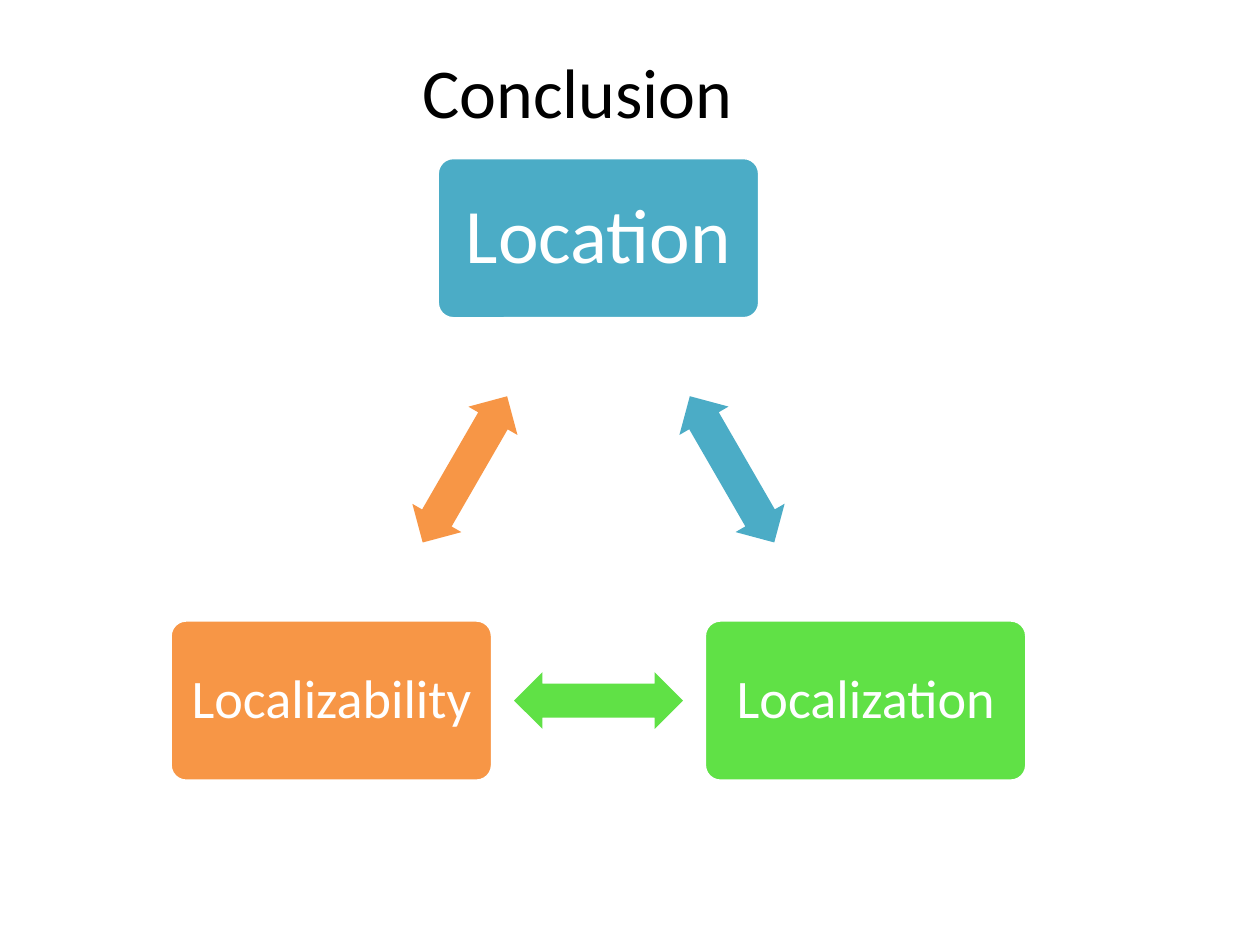
from dataclasses import dataclass

from pptx import Presentation
from pptx.dml.color import RGBColor
from pptx.enum.shapes import MSO_SHAPE as Shape
from pptx.enum.text import MSO_ANCHOR as Anchor, MSO_AUTO_SIZE as Fit, PP_ALIGN as Align
from pptx.util import Inches, Pt

WHITE = RGBColor(0xFF, 0xFF, 0xFF)
BLACK = RGBColor(0, 0, 0)
TEAL = RGBColor(0x4B, 0xAC, 0xC6)
GREEN = RGBColor(0x60, 0xE1, 0x46)
ORANGE = RGBColor(0xF7, 0x96, 0x46)
FONT = "Calibri"
BOX_W, BOX_H = 2.56, 1.28
ARROW_W, ARROW_H = 1.34, 0.45


@dataclass
class Node:
    text: str
    x: float
    y: float
    size: int
    color: RGBColor


NODES = [
    Node("Location", 4.75, 1.89, 44, TEAL),
    Node("Localization", 6.87, 5.56, 31, GREEN),
    Node("Localizability", 2.63, 5.56, 31, ORANGE),
]


def set_text(frame, text: str, size: int, color: RGBColor) -> None:
    frame.text = text
    frame.word_wrap = True
    frame.vertical_anchor = Anchor.MIDDLE
    line = frame.paragraphs[0]
    line.alignment = Align.CENTER
    font = line.runs[0].font
    font.name, font.size = FONT, Pt(size)
    font.color.rgb = color


def add_block(slide, kind: Shape, x: float, y: float, w: float, h: float, color: RGBColor):
    block = slide.shapes.add_shape(
        kind, Inches(x - w / 2), Inches(y - h / 2), Inches(w), Inches(h))
    block.shadow.inherit = False
    block.fill.solid()
    block.fill.fore_color.rgb = color
    return block


def add_box(slide, node: Node) -> None:
    box = add_block(slide, Shape.ROUNDED_RECTANGLE, node.x, node.y, BOX_W, BOX_H, node.color)
    box.adjustments[0] = 0.1
    box.line.color.rgb = WHITE
    box.line.width = Pt(2)
    frame = box.text_frame
    frame.margin_left = frame.margin_right = Inches(0.09)
    set_text(frame, node.text, node.size, WHITE)
    frame.paragraphs[0].line_spacing = 0.9


def add_arrow(slide, start: Node, end: Node, turn: int) -> None:
    x, y = (start.x + end.x) / 2, (start.y + end.y) / 2
    arrow = add_block(slide, Shape.LEFT_RIGHT_ARROW, x, y, ARROW_W, ARROW_H, start.color)
    arrow.adjustments[0] = 0.6
    arrow.adjustments[1] = 0.5
    arrow.line.fill.background()
    arrow.rotation = turn


def main() -> None:
    deck = Presentation()
    deck.slide_width, deck.slide_height = Inches(10), Inches(7.5)
    slide = deck.slides.add_slide(deck.slide_layouts[5])
    title = slide.shapes.title
    title.left, title.top = Inches(1.25), Inches(0.33)
    title.width, title.height = Inches(6.67), Inches(0.77)
    set_text(title.text_frame, "Conclusion", 40, BLACK)
    title.text_frame.auto_size = Fit.NONE
    for i, node in enumerate(NODES):
        add_box(slide, node)
        add_arrow(slide, node, NODES[(i + 1) % len(NODES)], 60 + 120 * i)
    deck.save("out.pptx")


if __name__ == "__main__":
    main()
